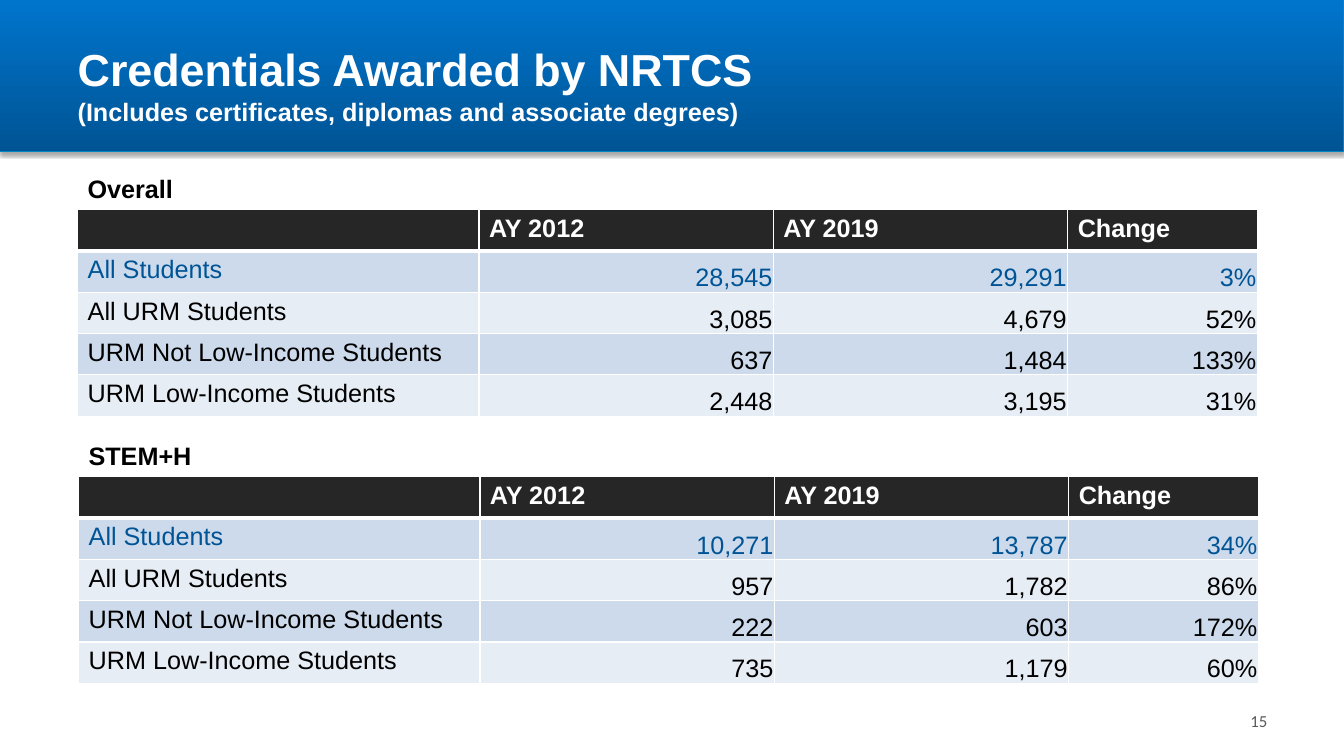
from lxml import etree
from pptx import Presentation
from pptx.dml.color import RGBColor
from pptx.enum import shapes, text
from pptx.oxml import ns
from pptx.util import Inches, Pt

COLORS = {
    "white": "FFFFFF", "black": "000000", "blue": "005495",
    "light_blue": "0075CC", "band_line": "0085C3", "header": "262626",
    "row_dark": "CCDAEB", "row_light": "E7EDF5", "number": "595959",
}
HEADINGS = ["", "AY 2012", "AY 2019", "Change"]
GROUPS = ["All Students", "All URM Students",
          "URM Not Low-Income Students", "URM Low-Income Students"]
OVERALL = [
    ["28,545", "29,291", "3%"],
    ["3,085", "4,679", "52%"],
    ["637", "1,484", "133%"],
    ["2,448", "3,195", "31%"],
]
STEM_H = [
    ["10,271", "13,787", "34%"],
    ["957", "1,782", "86%"],
    ["222", "603", "172%"],
    ["735", "1,179", "60%"],
]
COLUMN_WIDTHS = [3.98, 2.92, 2.92, 1.88]
ROW_HEIGHT = 0.41
RIGHT = text.PP_ALIGN.RIGHT


def rgb(name):
    return RGBColor.from_string(COLORS[name])


def add_run(p, words, color, size=18, bold=False, name="Arial"):
    r = p.add_run()
    r.text = words
    for key, value in {"size": Pt(size), "bold": bold, "name": name}.items():
        setattr(r.font, key, value)
    r.font.color.rgb = rgb(color)


def add_child(parent, tag, **attributes):
    return etree.SubElement(parent, ns.qn(tag), attributes)


def add_band(s):
    """Draw the gradient header band behind the title."""
    band = s.shapes.add_shape(shapes.MSO_SHAPE.RECTANGLE, 0, 0,
                              Inches(13.33), Inches(1.5))
    band.fill.gradient()
    band.fill.gradient_angle = 90
    for stop, color in zip(band.fill.gradient_stops, ["blue", "light_blue"]):
        stop.color.rgb = rgb(color)
    band.line.color.rgb = rgb("band_line")
    band.line.width = Pt(0.75)
    band.shadow.inherit = False
    effects = band.element.spPr.find(ns.qn("a:effectLst"))
    shadow = add_child(effects, "a:outerShdw", blurRad=str(Pt(3.1)),
                       dist=str(Pt(1.8)), dir="5400000", rotWithShape="0")
    shade = add_child(shadow, "a:srgbClr", val=COLORS["black"])
    add_child(shade, "a:alpha", val="35000")
    s.shapes.title.element.addprevious(band.element)


def fill_title(s, heading, note):
    title = s.shapes.title
    box = {"left": 0.67, "top": 0.17, "width": 12, "height": 1.33}
    for key, value in box.items():
        setattr(title, key, Inches(value))
    tf = title.text_frame
    tf.auto_size = text.MSO_AUTO_SIZE.NONE
    tf.vertical_anchor = text.MSO_ANCHOR.MIDDLE
    p = tf.paragraphs[0]
    p.alignment = text.PP_ALIGN.LEFT
    add_run(p, heading, "white", 32, True)
    p.add_line_break()
    add_run(p, note, "white", 18, True)


def add_text(s, left, top, width, words, color, align=None, **font):
    tf = s.shapes.add_textbox(Inches(left), Inches(top),
                              Inches(width), Inches(0.4)).text_frame
    tf.word_wrap = True
    tf.paragraphs[0].alignment = align
    add_run(tf.paragraphs[0], words, color, **font)
    return tf


def add_borders(cell, top, bottom):
    """Give the cell white borders; top and bottom widths are in points."""
    tcPr = cell._tc.get_or_add_tcPr()
    for side, width in {"L": 1, "R": 1, "T": top, "B": bottom}.items():
        line = add_child(tcPr, f"a:ln{side}", w=str(Pt(width)))
        add_child(add_child(line, "a:solidFill"), "a:srgbClr",
                  val=COLORS["white"])


def format_number_cell(cell):
    cell.vertical_anchor = text.MSO_ANCHOR.BOTTOM
    for side in ("left", "top", "right"):
        setattr(cell, f"margin_{side}", Inches(0.01))
    cell.margin_bottom = 0
    cell.text_frame.paragraphs[0].alignment = RIGHT


def add_credentials(s, left, top, label, values):
    """Add a labelled table of credentials by student group."""
    rows = [HEADINGS] + [[g] + v for g, v in zip(GROUPS, values)]
    table = s.shapes.add_table(
        len(rows), len(HEADINGS), Inches(left), Inches(top + 0.41),
        Inches(sum(COLUMN_WIDTHS)), Inches(ROW_HEIGHT * len(rows))).table
    for column, width in zip(table.columns, COLUMN_WIDTHS):
        column.width = Inches(width)
    for i, row in enumerate(rows):
        table.rows[i].height = Inches(ROW_HEIGHT)
        fill = "row_dark" if i % 2 else "row_light"
        color = "blue" if i == 1 else "black"
        if i == 0:
            fill, color = "header", "white"
        for j, words in enumerate(row):
            cell = table.cell(i, j)
            add_borders(cell, 3 if i == 1 else 1, 3 if i == 0 else 1)
            cell.fill.solid()
            cell.fill.fore_color.rgb = rgb(fill)
            if words:
                add_run(cell.text_frame.paragraphs[0], words, color,
                        bold=i == 0)
            if i and j:
                format_number_cell(cell)
    add_text(s, left, top, 11.89, label, "black", bold=True)


def main():
    prs = Presentation()
    prs.slide_width, prs.slide_height = Inches(13.33), Inches(7.5)
    s = prs.slides.add_slide(prs.slide_layouts[5])
    add_band(s)
    fill_title(s, "Credentials Awarded by NRTCS",
               "(Includes certificates, diplomas and associate degrees)")
    number = add_text(s, 12.11, 6.95, 0.56, "15", "number", RIGHT,
                      size=12, name="Calibri")
    number.vertical_anchor = text.MSO_ANCHOR.MIDDLE
    add_credentials(s, 0.77, 1.67, "Overall", OVERALL)
    add_credentials(s, 0.78, 4.32, "STEM+H", STEM_H)
    prs.save("out.pptx")


if __name__ == "__main__":
    main()
